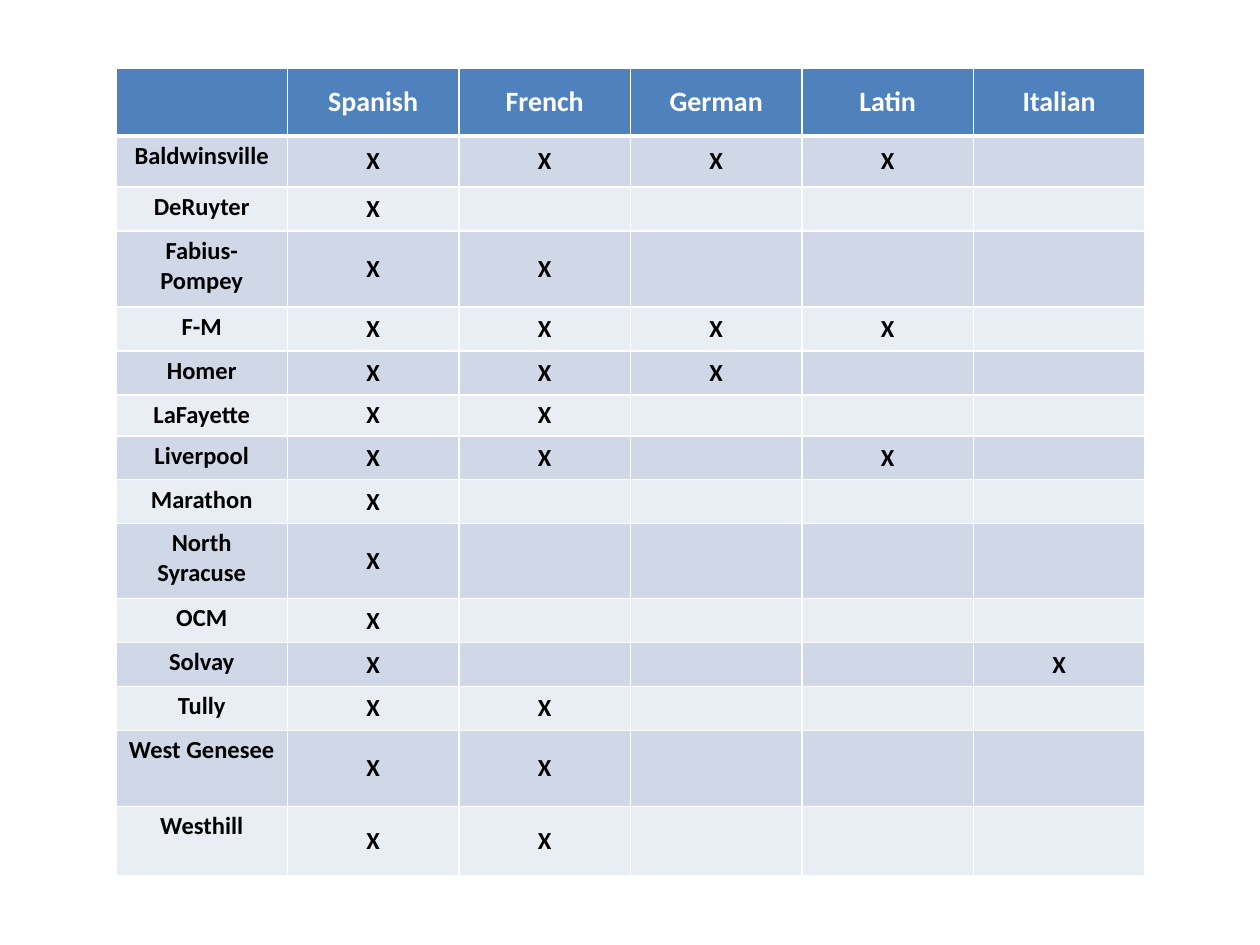
from dataclasses import dataclass

from lxml.etree import SubElement
from pptx import Presentation
from pptx.dml.color import RGBColor
from pptx.enum.text import MSO_ANCHOR, PP_ALIGN
from pptx.oxml.ns import qn
from pptx.table import _Cell
from pptx.util import Emu, Pt

EMU_PER_PX = 914400 // 126

WHITE = RGBColor(0xFF, 0xFF, 0xFF)
BLACK = RGBColor(0x00, 0x00, 0x00)
HEADER_BLUE = RGBColor(0x4F, 0x81, 0xBD)
BAND_DARK = RGBColor(0xD0, 0xD8, 0xE8)
BAND_LIGHT = RGBColor(0xE9, 0xED, 0xF4)

MARGINS = {"margin_left": 11, "margin_right": 11, "margin_top": 5, "margin_bottom": 5}


@dataclass(frozen=True)
class School:
    name: str
    languages: str
    height: int


@dataclass(frozen=True)
class CellStyle:
    fill: RGBColor
    color: RGBColor
    size: int
    anchor: MSO_ANCHOR = MSO_ANCHOR.MIDDLE
    top_line: int = 1
    bottom_line: int = 1


LANGUAGES = ["Spanish", "French", "German", "Latin", "Italian"]
HEADER_HEIGHT = 68
SCHOOLS = [
    School("Baldwinsville", "Spanish French German Latin", 51),
    School("DeRuyter", "Spanish", 44),
    School("Fabius-Pompey", "Spanish French", 76),
    School("F-M", "Spanish French German Latin", 44),
    School("Homer", "Spanish French German", 44),
    School("LaFayette", "Spanish French", 41),
    School("Liverpool", "Spanish French Latin", 44),
    School("Marathon", "Spanish", 44),
    School("North Syracuse", "Spanish", 75),
    School("OCM", "Spanish", 44),
    School("Solvay", "Spanish Italian", 44),
    School("Tully", "Spanish French", 44),
    School("West Genesee", "Spanish French", 76),
    School("Westhill", "Spanish French", 69),
]


def px(length: int) -> Emu:
    return Emu(length * EMU_PER_PX)


def add_borders(cell: _Cell, style: CellStyle) -> None:
    properties = cell._tc.get_or_add_tcPr()
    widths = {"lnL": 1, "lnR": 1, "lnT": style.top_line, "lnB": style.bottom_line}
    for tag, width in widths.items():
        line = SubElement(properties, qn(f"a:{tag}"), w=str(Pt(width)))
        fill = SubElement(line, qn("a:solidFill"))
        SubElement(fill, qn("a:srgbClr"), val=str(WHITE))


def fill_cell(cell: _Cell, text: str, style: CellStyle) -> None:
    add_borders(cell, style)
    cell.fill.solid()
    cell.fill.fore_color.rgb = style.fill
    cell.vertical_anchor = style.anchor
    for side, margin in MARGINS.items():
        setattr(cell, side, px(margin))
    para = cell.text_frame.paragraphs[0]
    para.alignment = PP_ALIGN.CENTER
    if text:
        span = para.add_run()
        span.text = text
        font_values = {"name": "Calibri", "size": Pt(style.size), "bold": True}
        for name, value in font_values.items():
            setattr(span.font, name, value)
        span.font.color.rgb = style.color
    else:
        # Keep empty cells from stretching their row
        SubElement(para._p, qn("a:endParaRPr"), sz=str(style.size * 100))


def main() -> None:
    deck = Presentation()
    deck.slide_width, deck.slide_height = px(1260), px(945)
    page = deck.slides.add_slide(deck.slide_layouts[6])

    # Table grid with equal columns
    heights = [HEADER_HEIGHT] + [school.height for school in SCHOOLS]
    frame = page.shapes.add_table(
        len(heights), len(LANGUAGES) + 1, px(116), px(68), px(1029), px(sum(heights))
    )
    table = frame.table
    for row, height in zip(table.rows, heights):
        row.height = px(height)

    # Header row
    header = CellStyle(HEADER_BLUE, WHITE, 16, bottom_line=3)
    for column, text in enumerate([""] + LANGUAGES):
        fill_cell(table.cell(0, column), text, header)

    # One banded row per school, with an X for each language taught
    for index, school in enumerate(SCHOOLS, start=1):
        band = BAND_DARK if index % 2 else BAND_LIGHT
        top_line = 3 if index == 1 else 1
        name_style = CellStyle(band, BLACK, 14, MSO_ANCHOR.TOP, top_line)
        mark_style = CellStyle(band, BLACK, 14, top_line=top_line)
        fill_cell(table.cell(index, 0), school.name, name_style)
        taught = school.languages.split()
        for column, language in enumerate(LANGUAGES, start=1):
            mark = "X" if language in taught else ""
            fill_cell(table.cell(index, column), mark, mark_style)

    deck.save("out.pptx")


if __name__ == "__main__":
    main()
